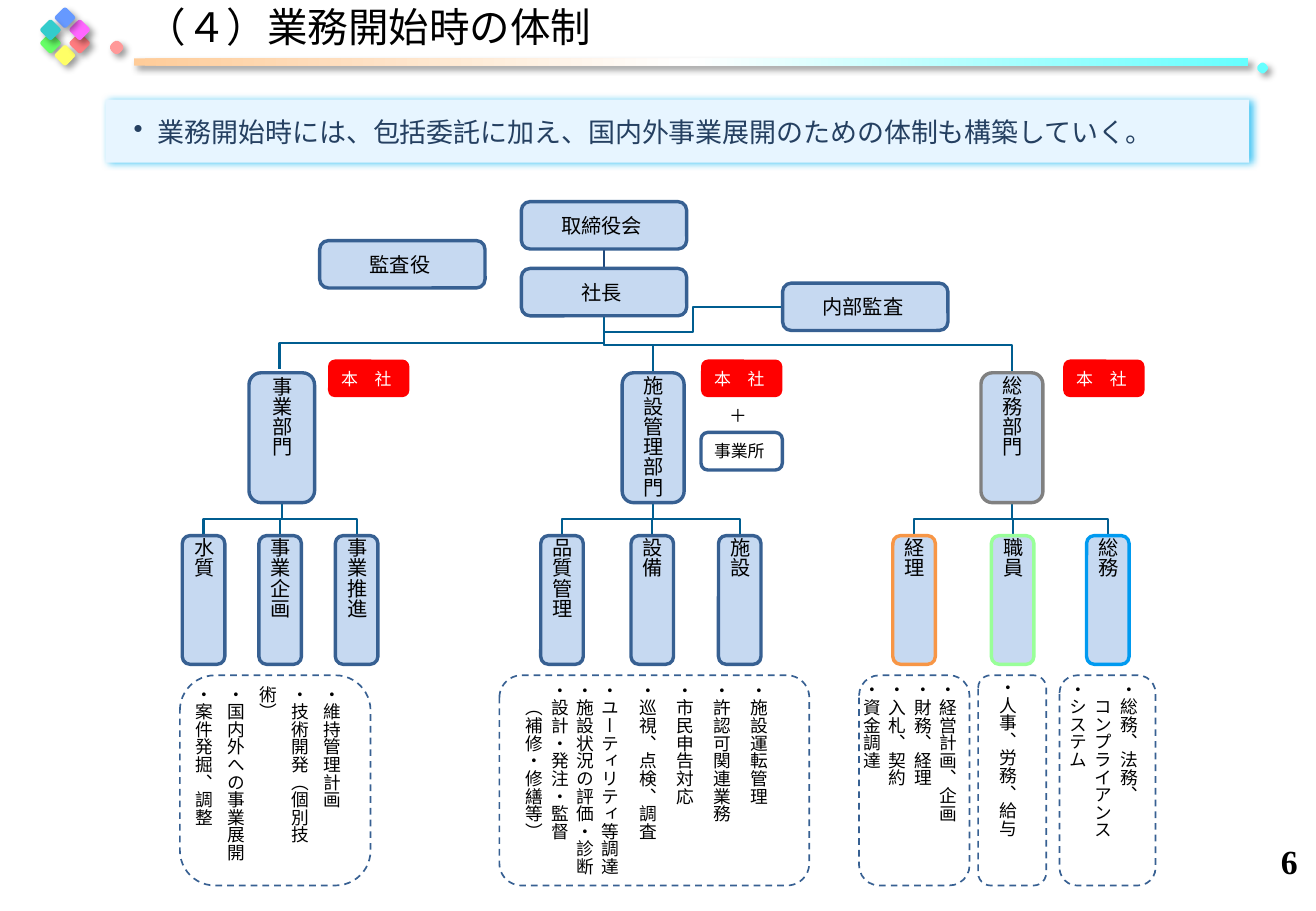
from dataclasses import dataclass
from copy import deepcopy
from typing import NamedTuple, Optional

from lxml.etree import SubElement
from pptx import Presentation
from pptx.dml.color import RGBColor as Rgb
from pptx.enum.dml import MSO_LINE as Dash
from pptx.enum.shapes import MSO_CONNECTOR as Conn, MSO_SHAPE as Geo
from pptx.enum.text import MSO_ANCHOR as Anchor, PP_ALIGN as Align
from pptx.oxml.ns import qn
from pptx.util import Pt

COLOURS = {
    "black": "000000", "white": "FFFFFF", "box": "C6D9F1", "navy": "376092",
    "link": "005D90", "spine": "1F497D", "red": "FF0000", "grey": "808080",
    "orange": "F79646", "mint": "99FF99", "azure": "009AF0",
    "banner": "E7F5FF", "glow": "00B1F0", "banner_text": "254061",
    "green": "66FF66", "yellow": "FFFF66", "coral": "FF7C80", "pink": "FF66FF",
    "blue": "6699FF", "teal": "33CCCC", "aqua": "66FFFF", "rose": "FF9999",
    "peach": "FFCC99",
}
SANS, SERIF = "Noto Sans CJK JP", "Times New Roman"


class Area(NamedTuple):
    x: float
    y: float
    w: float
    h: float


class Shadow(NamedTuple):
    colour: str
    alpha: int
    blur: float
    dist: float
    angle: int


class Line(NamedTuple):
    text: str
    spacing: Optional[float] = None
    hanging: float = 0


class Section(NamedTuple):
    name: str
    centre: float
    outline: str = "navy"


@dataclass
class Department:
    name: str
    centre: float
    width: float
    entry: tuple[float, float]
    tag_x: float
    sections: list[Section]
    outline: str = "navy"


@dataclass
class Duties:
    x: float
    width: float
    lines: list[Line]
    corner: float = 0.184
    inset: float = 2.88


SOFT = Shadow("black", 40, 4, 3, 45)
GLOW = Shadow("glow", 75, 5, 2, 0)
SMALL_INSETS = (2.88, 0, 5.76, 0)
TALL_INSETS = (5.76, 0, 5.76, 0)

STAFF = [("監査役", 189.4, 142.6), ("取締役会", 308.9, 119.5),
         ("社長", 308.9, 159.1), ("内部監査", 463.7, 167.8)]
SPINE_X, PRESIDENT_BOTTOM = 357.8, 187.6
DEPT_TOP, DEPT_BOTTOM, SECTION_TOP = 221, 298, 317.5
DEPARTMENTS = [
    Department("事業部門", 167, 38.9, (165.6, 219), 194.4,
               [Section("水質", 120.6), Section("事業企画", 166), Section("事業推進", 211.3)]),
    Department("施設管理部門", 387, 36.7, (387, DEPT_TOP), 415.4,
               [Section("品質管理", 333), Section("設備", 386.5), Section("施設", 438.3)]),
    Department("総務部門", 599.6, 36.7, (599.6, DEPT_TOP), 630,
               [Section("経理", 541.6, "orange"), Section("職員", 600, "mint"),
                Section("総務", 656.4, "azure")], "grey"),
]
DUTIES = [
    Duties(106.6, 113, [Line(t, 19) for t in (
        "・維持管理計画", "・技術開発（個別技術）", "・国内外への事業展開", "・案件発掘、調整")]),
    Duties(295.9, 183.6, [
        *(Line(t, 22) for t in ("・施設運転管理", "・許認可関連業務", "・市民申告対応",
                                "・巡視、点検、調査", "・ユーティリティ等調達")),
        Line("・施設状況の評価・診断", 15), Line("・設計・発注・監督", 15),
        Line("　（補修・修繕等）", 15, 11.5)], 0.106, 5.76),
    Duties(509, 65.5, [Line(t, 15) for t in (
        "・経営計画、企画", "・財務、経理", "・入札、契約", "・資金調達")]),
    Duties(579.6, 40.3, [Line("・人事、労務、給与", 15)]),
    Duties(627.8, 56.9, [Line(t, 15) for t in (
        "・総務、法務、", "　コンプライアンス", "・システム")]),
]
DIAMONDS = [("green", 25.2, 20.9), ("yellow", 33.8, 28.1), ("coral", 42.5, 20.9),
            ("pink", 42.5, 13), ("blue", 33.8, 5.8), ("teal", 25.2, 13)]

deck = Presentation()
deck.slide_width, deck.slide_height = Pt(779.76), Pt(540)
slide = deck.slides.add_slide(deck.slide_layouts[6])


def rgb(name: str) -> Rgb:
    return Rgb.from_string(COLOURS[name])


def apply(target, values: dict) -> None:
    for name, value in values.items():
        setattr(target, name, value)


def draw_shape(area: Area, fill=None, outline=None, width=2.0, dash=False, corner=0.184,
               geo=Geo.ROUNDED_RECTANGLE, shadow: Optional[Shadow] = None, turn=0):
    shape = slide.shapes.add_shape(geo, *map(Pt, area))
    shape.shadow.inherit = False
    shape.rotation = turn
    if geo == Geo.ROUNDED_RECTANGLE:
        shape.adjustments[0] = corner
    if fill:
        shape.fill.solid()
        shape.fill.fore_color.rgb = rgb(fill)
    else:
        shape.fill.background()
    if outline:
        shape.line.color.rgb = rgb(outline)
        shape.line.width = Pt(width)
        if dash:
            shape.line.dash_style = Dash.DASH
    else:
        shape.line.fill.background()
    if shadow:
        effects = shape._element.spPr.find(qn("a:effectLst"))
        outer = SubElement(effects, qn("a:outerShdw"), blurRad=str(Pt(shadow.blur)),
                           dist=str(Pt(shadow.dist)), dir=str(shadow.angle * 60000),
                           algn="ctr", rotWithShape="0")
        tint = SubElement(outer, qn("a:srgbClr"), val=COLOURS[shadow.colour])
        SubElement(tint, qn("a:alpha"), val=str(shadow.alpha * 1000))
    return shape


def write(shape, lines: list[Line], size: float, colour="black", align=Align.CENTER,
          insets=SMALL_INSETS, vertical=False, font=SANS, bold=False, before=0) -> None:
    frame = shape.text_frame
    sides = ("margin_left", "margin_top", "margin_right", "margin_bottom")
    apply(frame, {"word_wrap": True, "vertical_anchor": Anchor.MIDDLE,
                  **dict(zip(sides, map(Pt, insets)))})
    if vertical:
        frame._txBody.bodyPr.set("vert", "eaVert")
    for index, line in enumerate(lines):
        para = frame.add_paragraph() if index else frame.paragraphs[0]
        para.alignment = align
        if before:
            para.space_before = Pt(before)
        if line.spacing:
            para.line_spacing = Pt(line.spacing)
        if line.hanging:
            apply_indent(para, line.hanging, line.hanging)
        run = para.add_run()
        run.text = line.text
        apply(run.font, {"size": Pt(size), "name": font, "bold": bold})
        run.font.color.rgb = rgb(colour)
        SubElement(run._r.get_or_add_rPr(), qn("a:ea"), typeface=font)


def apply_indent(para, margin: float, hanging: float) -> None:
    props = para._p.get_or_add_pPr()
    props.set("marL", str(Pt(margin)))
    props.set("indent", str(-Pt(hanging)))


def connect(kind, start: tuple, end: tuple, colour="link", width=1.25, drop=False) -> None:
    (x1, y1), (x2, y2) = start, end
    rightward = x2 > x1
    if drop:
        mid_x, mid_y = (x1 + x2) / 2, (y1 + y2) / 2
        half_w, half_h = (y2 - y1) / 2, abs(x2 - x1) / 2
        flip = -1 if rightward else 1
        x1, x2 = mid_x - flip * half_w, mid_x + flip * half_w
        y1, y2 = mid_y - half_h, mid_y + half_h
    link = slide.shapes.add_connector(kind, *map(Pt, (x1, y1, x2, y2)))
    link.line.color.rgb = rgb(colour)
    link.line.width = Pt(width)
    props = link._element.spPr
    if drop:
        props.find(qn("a:xfrm")).set("rot", str((270 if rightward else 90) * 60000))
    SubElement(props, qn("a:effectLst"))


for tint, x, y in DIAMONDS:
    draw_shape(Area(x, y, 9.4, 9.4), tint, corner=0.167, shadow=SOFT, turn=45)
rule = draw_shape(Area(79.2, 34.6, 660.2, 4.3), "peach", corner=0.167, shadow=SOFT)
rule.fill.gradient()
rule.fill.gradient_angle = 0
stops = rule._element.spPr.find(".//" + qn("a:gsLst"))
stops.append(deepcopy(stops[0]))
for stop, (position, tint) in zip(rule.fill.gradient_stops,
                                  [(0, "peach"), (0.5, "white"), (1, "aqua")]):
    stop.position = position
    stop.color.rgb = rgb(tint)
for tint, dot in (("aqua", Area(745.2, 37.4, 5.8, 5.8)), ("rose", Area(65.5, 24.5, 7.2, 7.2))):
    draw_shape(dot, tint, corner=0.377, shadow=SOFT, turn=45)

connect(Conn.STRAIGHT, (SPINE_X, 148), (SPINE_X, 159.1), "spine", 1.5)
connect(Conn.ELBOW, (SPINE_X, 196.6), (463.7, 182))
for dept in DEPARTMENTS:
    connect(Conn.ELBOW, (SPINE_X, PRESIDENT_BOTTOM), dept.entry, drop=True)
    for section in dept.sections:
        connect(Conn.ELBOW, (dept.centre, DEPT_BOTTOM), (section.centre, SECTION_TOP), drop=True)

for role, x, y in STAFF:
    write(draw_shape(Area(x, y, 98, 28.1), "box", "navy"), [Line(role)], 12)
for dept in DEPARTMENTS:
    block = Area(dept.centre - dept.width / 2, DEPT_TOP, dept.width, DEPT_BOTTOM - DEPT_TOP)
    write(draw_shape(block, "box", dept.outline), [Line(dept.name)], 12,
          align=Align.LEFT, insets=TALL_INSETS, vertical=True)
    write(draw_shape(Area(dept.tag_x, 213.1, 48.2, 22.3), "red"), [Line("本　社")], 10, "white")
    for section in dept.sections:
        block = Area(section.centre - 12.6, SECTION_TOP, 25.2, 76.3)
        write(draw_shape(block, "box", section.outline), [Line(section.name)], 12,
              insets=TALL_INSETS, vertical=True)
write(draw_shape(Area(415.4, 256.3, 48.2, 22.3), None, "navy"), [Line("事業所")], 10)
write(draw_shape(Area(425.5, 239.8, 28.1, 20.9)), [Line("＋", 15)], 10.5,
      align=Align.LEFT, vertical=True)
for duties in DUTIES:
    frame_area = Area(duties.x, 400.3, duties.width, 124.6)
    write(draw_shape(frame_area, None, "navy", 1, True, duties.corner), duties.lines, 10.5,
          align=Align.LEFT, insets=(duties.inset, 0, 5.76, 0), vertical=True)

banner = draw_shape(Area(62.6, 59, 677.5, 37.4), "banner", geo=Geo.RECTANGLE, shadow=GLOW)
write(banner, [Line("業務開始時には、包括委託に加え、国内外事業展開のための体制も構築していく。", 20)],
      16, "banner_text", Align.LEFT, (8.64,) * 4)
point = banner.text_frame.paragraphs[0]
apply_indent(point, 22.3, 14.4)
SubElement(point._p.get_or_add_pPr(), qn("a:buChar"), char="•")

number = slide.shapes.add_textbox(*map(Pt, Area(737.3, 496.1, 53.3, 28.8)))
write(number, [Line("6")], 20, insets=(7.2, 3.6, 7.2, 3.6), font=SERIF, bold=True)
title = slide.shapes.add_textbox(*map(Pt, Area(79.2, 0, 660.2, 31)))
write(title, [Line("（４）業務開始時の体制")], 24, align=Align.LEFT,
      insets=(7.2, 3.6, 7.2, 3.6), before=6)

deck.save("out.pptx")
